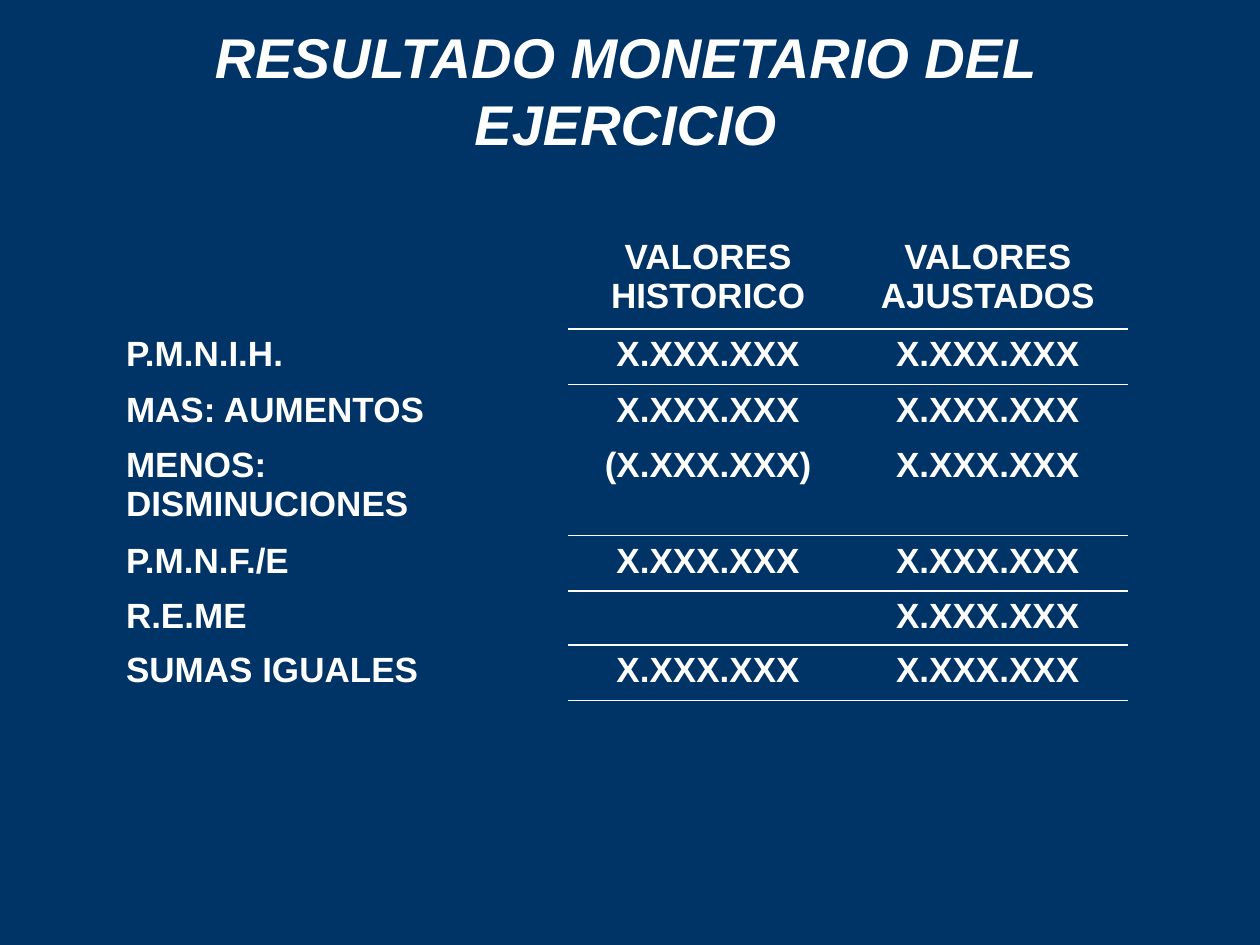
import dataclasses

import lxml.etree
import pptx
import pptx.dml.color
import pptx.enum.text
import pptx.oxml.ns
import pptx.util

Inches = pptx.util.Inches
Align = pptx.enum.text.PP_ALIGN
qn = pptx.oxml.ns.qn

COLORS = {"background": "003366", "text": "FFFFFF", "rule": "FFFFFF"}
FONT = "Arial"
NO_STYLE_NO_GRID = "{2D5ABB26-0587-4C30-8999-92F81FD0307C}"
AMOUNT = "X.XXX.XXX"
COLUMN_WIDTHS = (3.61, 2.22, 2.22)


@dataclasses.dataclass
class Entry:
    concept: str
    historic: str = AMOUNT
    adjusted: str = AMOUNT
    height: float = 0.44
    ruled: bool = False  # line below the two value columns


ENTRIES = [
    Entry("", "VALORES HISTORICO", "VALORES AJUSTADOS", height=0.77, ruled=True),
    Entry("P.M.N.I.H."),
    Entry("MAS: AUMENTOS"),
    Entry("MENOS: DISMINUCIONES", f"({AMOUNT})", height=0.76, ruled=True),
    Entry("P.M.N.F./E"),
    Entry("R.E.ME", historic="", height=0.43, ruled=True),
    Entry("SUMAS IGUALES", ruled=True),
]


def rgb(name: str) -> pptx.dml.color.RGBColor:
    return pptx.dml.color.RGBColor.from_string(COLORS[name])


def write_text(frame, text: str, *, size: float, align=Align.LEFT,
               bold: bool = True, italic: bool = False) -> None:
    paragraph = frame.paragraphs[0]
    paragraph.alignment = align
    if not text:
        return
    run = paragraph.add_run()
    run.text = text
    run.font.name = FONT
    run.font.size = pptx.util.Pt(size)
    run.font.bold = bold
    run.font.italic = italic
    run.font.color.rgb = rgb("text")


def add_rule(cell, side: str) -> None:
    """Draw a border on one side: 'lnT' or 'lnB'. Call lnB before lnT."""
    line = lxml.etree.Element(qn(f"a:{side}"), w=str(pptx.util.Pt(1)))
    fill = lxml.etree.SubElement(line, qn("a:solidFill"))
    lxml.etree.SubElement(fill, qn("a:srgbClr"), val=COLORS["rule"])
    cell._tc.get_or_add_tcPr().insert(0, line)


def add_title(slide, text: str) -> None:
    title = slide.shapes.title
    title.left, title.top = Inches(0.83), Inches(0.13)
    title.width, title.height = Inches(8.27), Inches(1.17)
    frame = title.text_frame
    frame.word_wrap = True
    frame.auto_size = pptx.enum.text.MSO_AUTO_SIZE.NONE
    frame.vertical_anchor = pptx.enum.text.MSO_ANCHOR.TOP
    write_text(frame, text, size=32, align=Align.CENTER, italic=True)


def add_statement(slide, entries: list[Entry]) -> None:
    statement = slide.shapes.add_table(
        len(entries), len(COLUMN_WIDTHS), Inches(0.9), Inches(1.84),
        Inches(sum(COLUMN_WIDTHS)), Inches(sum(e.height for e in entries))).table
    statement.first_row = statement.horz_banding = False
    statement._tbl.tblPr.find(qn("a:tableStyleId")).text = NO_STYLE_NO_GRID
    for column, width in zip(statement.columns, COLUMN_WIDTHS):
        column.width = Inches(width)

    for i, entry in enumerate(entries):
        statement.rows[i].height = Inches(entry.height)
        for j, text in enumerate((entry.concept, entry.historic, entry.adjusted)):
            cell = statement.cell(i, j)
            cell.fill.background()
            write_text(cell.text_frame, text, size=20,
                       align=Align.CENTER if j else Align.LEFT)
            if j and entry.ruled:
                add_rule(cell, "lnB")
            if j and i and entries[i - 1].ruled:
                add_rule(cell, "lnT")


def main() -> None:
    deck = pptx.Presentation()
    deck.slide_width, deck.slide_height = Inches(10), Inches(7.5)
    slide = deck.slides.add_slide(deck.slide_layouts.get_by_name("Title Only"))

    # Background
    slide.background.fill.solid()
    slide.background.fill.fore_color.rgb = rgb("background")

    # Content
    add_statement(slide, ENTRIES)
    add_title(slide, "RESULTADO MONETARIO DEL EJERCICIO")
    deck.save("out.pptx")


if __name__ == "__main__":
    main()
